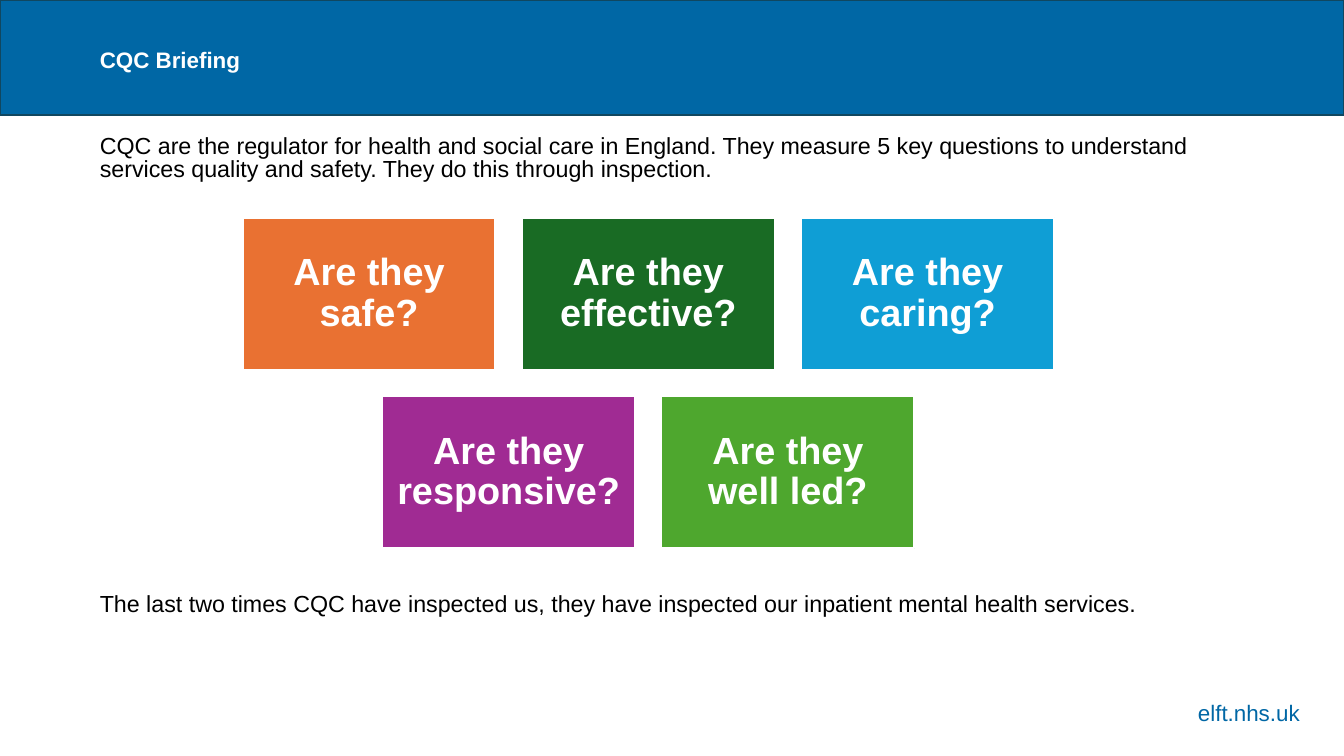
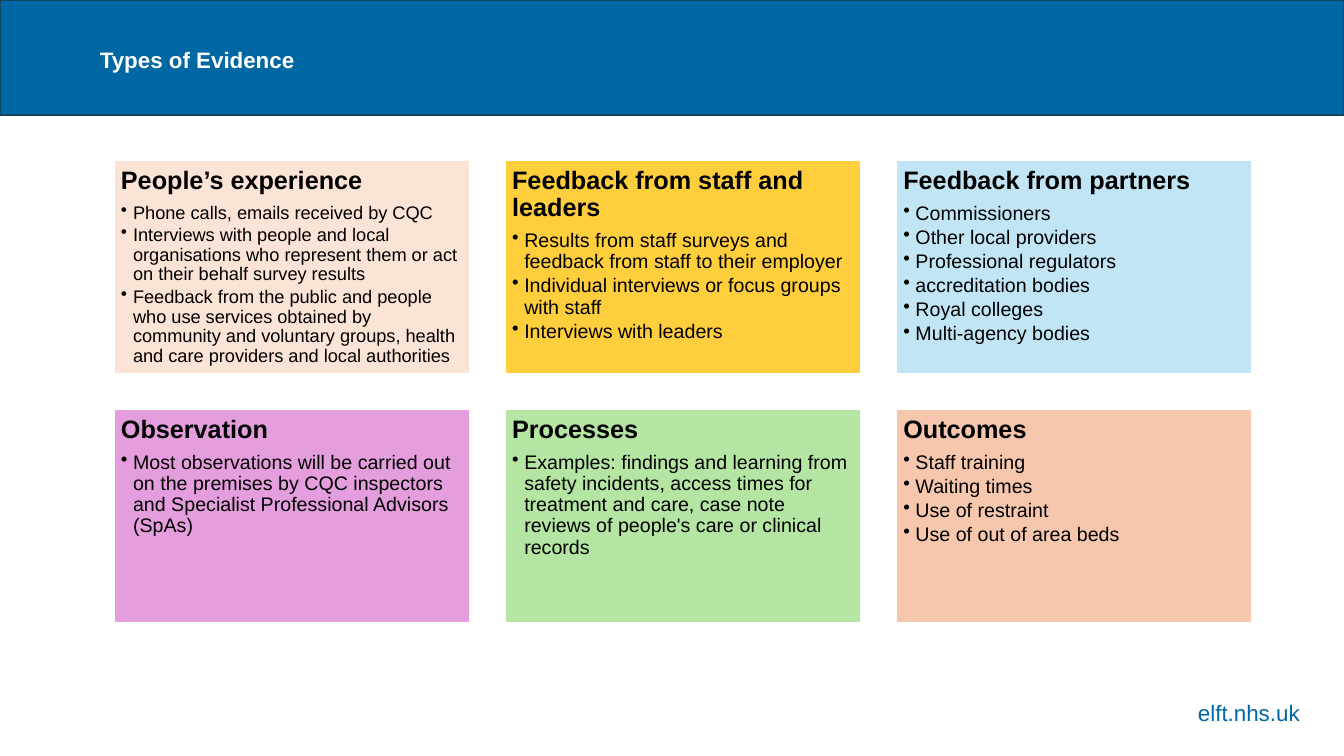
from dataclasses import dataclass

from lxml.etree import SubElement
from pptx import Presentation
from pptx.dml.color import RGBColor
from pptx.enum.shapes import MSO_SHAPE as Preset
from pptx.enum.text import MSO_ANCHOR as Anchor, MSO_AUTO_SIZE as AutoSize, PP_ALIGN as Align
from pptx.oxml.ns import qn
from pptx.util import Inches, Pt


@dataclass(frozen=True)
class Theme:
    """Colours and type sizes of the deck."""
    font: str = "Arial"
    brand: str = "0067A5"
    edge: str = "104760"
    white: str = "FFFFFF"
    ink: str = "000000"
    label: float = 16
    body: float = 16.6
    question: float = 27
    heading: float = 18
    bullet: float = 14
    small_bullet: float = 13


THEME = Theme()
WIDTH, HEIGHT = 13.33, 7.5
MARGIN = 0.89

INTRO = [
    "CQC are the regulator for health and social care in England. They measure 5 key questions "
    "to understand services quality and safety. They do this through inspection.",
    "The last two times CQC have inspected us, they have inspected our inpatient mental health services.",
]
QUESTION_ROWS = [
    [("Are they safe?", "E97132"), ("Are they effective?", "196B24"), ("Are they caring?", "0F9ED5")],
    [("Are they responsive?", "A02B93"), ("Are they well led?", "4EA72E")],
]
EVIDENCE = [
    ("People’s experience", "FBE3D6", THEME.small_bullet, [
        "Phone calls, emails received by CQC",
        "Interviews with people and local organisations who represent them or act on their behalf "
        "survey results",
        "Feedback from the public and people who use services obtained by community and voluntary "
        "groups, health and care providers and local authorities"]),
    ("Feedback from staff and leaders", "FFCE3C", THEME.bullet, [
        "Results from staff surveys and feedback from staff to their employer",
        "Individual interviews or focus groups with staff",
        "Interviews with leaders"]),
    ("Feedback from partners", "C1E5F5", THEME.bullet, [
        "Commissioners", "Other local providers", "Professional regulators",
        "accreditation bodies", "Royal colleges", "Multi-agency bodies"]),
    ("Observation", "E59EDD", THEME.bullet, [
        "Most observations will be carried out on the premises by CQC inspectors and Specialist "
        "Professional Advisors (SpAs)"]),
    ("Processes", "B4E5A2", THEME.bullet, [
        "Examples: findings and learning from safety incidents, access times for treatment and "
        "care, case note reviews of people's care or clinical records"]),
    ("Outcomes", "F6C6AD", THEME.bullet, [
        "Staff training", "Waiting times", "Use of restraint", "Use of out of area beds"]),
]


def place(shape, left, top, width, height):
    """Move a placeholder to a box given in inches."""
    shape.left, shape.top = Inches(left), Inches(top)
    shape.width, shape.height = Inches(width), Inches(height)


def prepare_frame(shape, anchor=Anchor.TOP, inset=None):
    """Return the wrapped text frame of a shape."""
    frame = shape.text_frame
    frame.word_wrap = True
    frame.auto_size = AutoSize.NONE
    frame.vertical_anchor = anchor
    if inset is not None:
        frame.margin_left = frame.margin_right = Inches(inset)
        frame.margin_top = frame.margin_bottom = Inches(inset)
    return frame


def write(para, text, size, color, bold=False, align=Align.LEFT, spacing=1.0,
          before=0, after=0, bullet=None):
    """Fill one paragraph and set its format."""
    para.text = text
    props = para._p.get_or_add_pPr()
    indent = Inches(0.12) if bullet else 0
    props.set("marL", str(indent))
    props.set("indent", str(-indent))
    if bullet:
        SubElement(props, qn("a:buChar")).set("char", bullet)
    else:
        SubElement(props, qn("a:buNone"))
    para.alignment = align
    para.line_spacing = spacing
    para.space_before, para.space_after = Pt(before), Pt(after)
    font = para.font
    font.name, font.size, font.bold = THEME.font, Pt(size), bold
    font.color.rgb = RGBColor.from_string(color)


def add_block(page, left, top, width, height, fill, line=THEME.white):
    """Add a flat outlined rectangle."""
    block = page.shapes.add_shape(
        Preset.RECTANGLE, Inches(left), Inches(top), Inches(width), Inches(height))
    block.shadow.inherit = False
    block.fill.solid()
    block.fill.fore_color.rgb = RGBColor.from_string(fill)
    block.line.color.rgb = RGBColor.from_string(line)
    block.line.width = Pt(1.5)
    return block


def brand_master(deck, page):
    """Put the band and the web address on the slide master."""
    band = add_block(page, 0, 0, WIDTH, 1.14, THEME.brand, THEME.edge)
    footer = page.shapes.add_textbox(Inches(11.17), Inches(6.89), Inches(1.82), Inches(0.37))
    write(prepare_frame(footer).paragraphs[0], "elft.nhs.uk", THEME.label, THEME.brand,
          align=Align.RIGHT)
    tree = deck.slide_master.shapes.element
    for number, shape in enumerate((footer, band), start=101):
        shape.element.xpath("p:nvSpPr/p:cNvPr")[0].set("id", str(number))
        tree.insert(2, shape.element)


def set_title(page, text):
    """Write the slide title on the band."""
    title = page.shapes.title
    place(title, MARGIN, 0.41, 5.32, 0.7)
    write(prepare_frame(title).paragraphs[0], text, THEME.label, THEME.white, bold=True)


def add_question(page, left, top, width, height, text, fill):
    """Add a coloured tile with one centred question."""
    tile = add_block(page, left, top, width, height, fill)
    para = prepare_frame(tile, Anchor.MIDDLE, 0.11).paragraphs[0]
    write(para, text, THEME.question, THEME.white, bold=True, align=Align.CENTER, spacing=0.9)


def add_questions(page, center, top, width, height, gap):
    """Stack rows of question tiles, each row centred."""
    for row, questions in enumerate(QUESTION_ROWS):
        count = len(questions)
        left = center - (count * width + (count - 1) * gap) / 2
        for column, (text, fill) in enumerate(questions):
            add_question(page, left + column * (width + gap), top + row * (height + gap),
                         width, height, text, fill)


def add_card(page, left, top, width, height, heading, fill, size, points):
    """Add an evidence card with a heading and bullets."""
    card = add_block(page, left, top, width, height, fill)
    frame = prepare_frame(card, inset=0.07)
    write(frame.paragraphs[0], heading, THEME.heading, THEME.ink, bold=True,
          spacing=0.9, after=0.35 * THEME.heading)
    for point in points:
        write(frame.add_paragraph(), point, size, THEME.ink,
              spacing=0.9, after=0.15 * size, bullet="•")


def add_cards(page, left, top, width, height, gap, columns=3):
    """Lay the evidence cards out in a grid."""
    for index, card in enumerate(EVIDENCE):
        row, column = divmod(index, columns)
        add_card(page, left + column * (width + gap), top + row * (height + gap),
                 width, height, *card)


def build_briefing(page):
    """Fill the slide on the five key questions."""
    set_title(page, "CQC Briefing")
    body = page.placeholders[1]
    place(body, MARGIN, 1.31, 11.77, 5.26)
    frame = prepare_frame(body)
    first, last = frame.paragraphs[0], frame.add_paragraph()
    write(first, INTRO[0], THEME.body, THEME.ink, spacing=0.8)
    write(last, INTRO[1], THEME.body, THEME.ink, spacing=0.8, before=295)
    add_questions(page, center=6.43, top=2.16, width=2.51, height=1.51, gap=0.26)


def build_evidence(page):
    """Fill the slide on the types of evidence."""
    set_title(page, "Types of Evidence")
    add_cards(page, left=1.13, top=1.59, width=3.53, height=2.12, gap=0.35)


def main():
    """Build and save the deck."""
    deck = Presentation()
    deck.slide_width, deck.slide_height = Inches(WIDTH), Inches(HEIGHT)
    briefing = deck.slides.add_slide(deck.slide_layouts[1])
    evidence = deck.slides.add_slide(deck.slide_layouts[5])
    brand_master(deck, briefing)
    build_briefing(briefing)
    build_evidence(evidence)
    deck.save("out.pptx")


if __name__ == "__main__":
    main()
